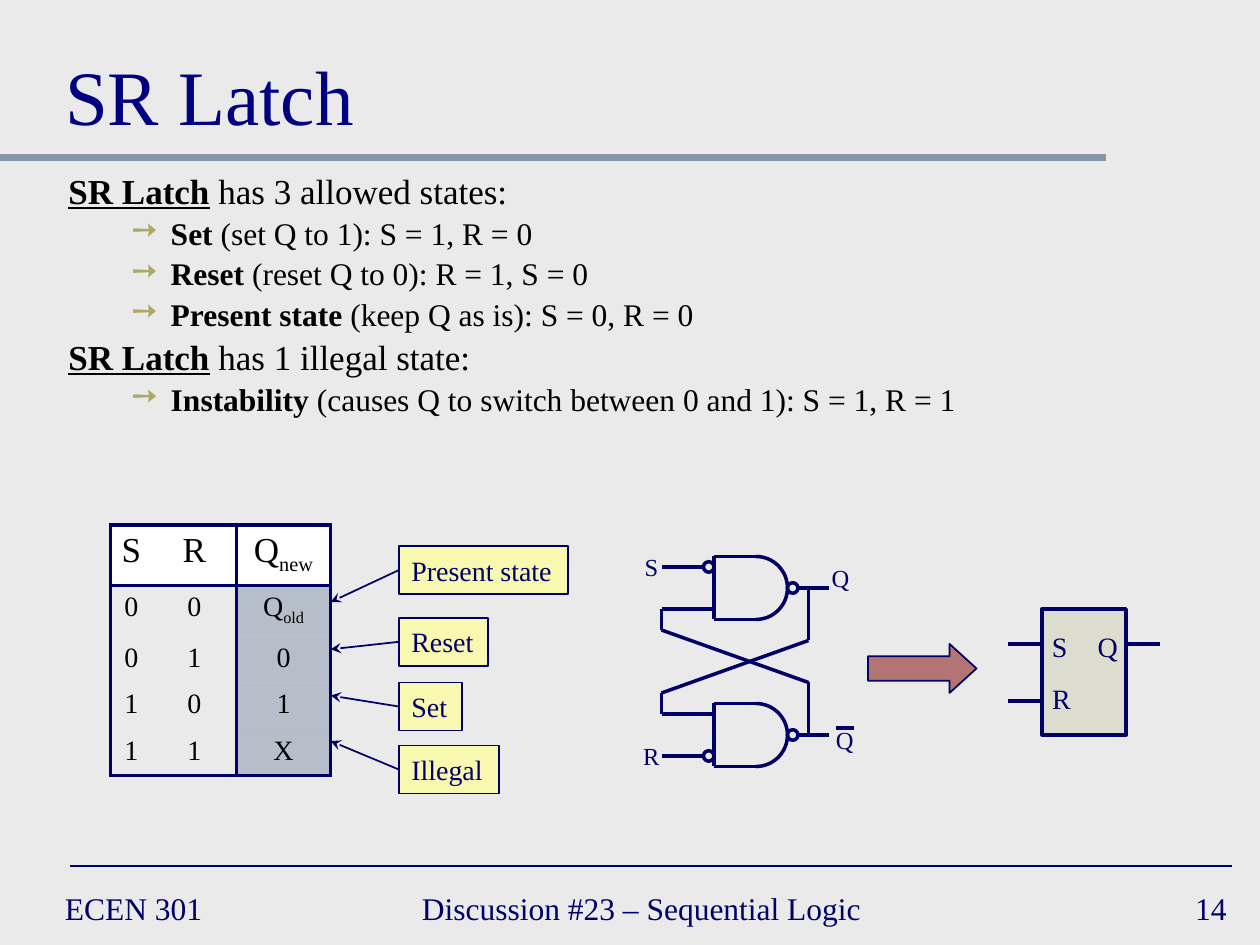
from math import cos, pi, sin

from lxml.etree import SubElement
from pptx import Presentation
from pptx.dml.color import RGBColor
from pptx.enum.shapes import MSO_CONNECTOR as CONNECTOR, MSO_SHAPE as SHAPE
from pptx.enum.text import MSO_ANCHOR as ANCHOR, MSO_AUTO_SIZE as AUTO_SIZE, PP_ALIGN as ALIGN
from pptx.oxml.ns import qn
from pptx.util import Pt

COLORS = {
    "background": "EAEAEA", "navy": "000066", "title": "000080", "black": "000000",
    "white": "FFFFFF", "slate": "8495A9", "olive": "ACA964", "block": "ABA964",
    "yellow": "FFFF99", "maroon": "800000",
}
FONT = "Times New Roman"


def rgb(name):
    return RGBColor.from_string(COLORS[name])


def set_opacity(properties, percent):
    color = properties.find(qn("a:solidFill"))[0]
    SubElement(color, qn("a:alpha"), val=str(percent * 1000))


class SlideBuilder:
    def __init__(self, slide):
        self.slide = slide
        self.shapes = slide.shapes
        slide.background.fill.solid()
        slide.background.fill.fore_color.rgb = rgb("background")

    def style(self, run, size, color="navy", bold=False, underline=False):
        font = run.font
        font.name, font.size, font.bold, font.underline = FONT, Pt(size), bold, underline
        font.color.rgb = rgb(color)

    def set_text(self, frame, text, size, color="navy", align=ALIGN.LEFT):
        frame.text = text
        frame.paragraphs[0].alignment = align
        self.style(frame.paragraphs[0].runs[0], size, color)

    def title(self, text, box):
        shape = self.shapes.title
        shape.left, shape.top, shape.width, shape.height = map(Pt, box)
        frame = shape.text_frame
        frame.vertical_anchor, frame.auto_size = ANCHOR.BOTTOM, AUTO_SIZE.NONE
        self.set_text(frame, text, 44, "title")

    def text(self, text, box, size, align=ALIGN.CENTER, anchor=ANCHOR.TOP, wrap=True):
        frame = self.shapes.add_textbox(*map(Pt, box)).text_frame
        frame.word_wrap, frame.vertical_anchor = wrap, anchor
        self.set_text(frame, text, size, align=align)

    def outline(self, items, box):
        """Items are (level, bold text, plain text)."""
        frame = self.shapes.add_textbox(*map(Pt, box)).text_frame
        frame.word_wrap = True
        for index, (level, lead, rest) in enumerate(items):
            paragraph = frame.add_paragraph() if index else frame.paragraphs[0]
            size = 18 if level else 20
            properties = paragraph._p.get_or_add_pPr()
            margin, indent = (58.5, -22.5) if level else (27, -27)
            properties.set("marL", str(Pt(margin)))
            properties.set("indent", str(Pt(indent)))
            paragraph.level = level
            paragraph.line_spacing = 0.9
            paragraph.space_before = Pt(size * 0.2 if index else 0)
            if level:
                bullet_color = SubElement(properties, qn("a:buClr"))
                SubElement(bullet_color, qn("a:srgbClr"), val=COLORS["olive"])
                SubElement(properties, qn("a:buChar"), char="➙")
            for text, strong in ((lead, True), (rest, False)):
                run = paragraph.add_run()
                run.text = text
                self.style(run, size, "black", strong, strong and not level)

    def shape(self, kind, box, fill=None, opacity=100, width=2):
        shape = self.shapes.add_shape(kind, *map(Pt, box))
        self.paint(shape, fill, opacity, width)
        return shape

    def paint(self, shape, fill, opacity, width):
        shape.shadow.inherit = False
        shape.line.color.rgb, shape.line.width = rgb("navy"), Pt(width)
        if fill:
            shape.fill.solid()
            shape.fill.fore_color.rgb = rgb(fill)
            set_opacity(shape._element.spPr, opacity)
        else:
            shape.fill.background()

    def line(self, x1, y1, x2, y2, width=2, color="navy"):
        line = self.shapes.add_connector(CONNECTOR.STRAIGHT, *map(Pt, (x1, y1, x2, y2)))
        line.line.color.rgb, line.line.width = rgb(color), Pt(width)
        SubElement(line._element.spPr, qn("a:effectLst"))
        return line

    def quarter_arc(self, x, y, radius, side):
        """Arc from above (side -1) or below (side 1) the centre to its right."""
        angles = [step * pi / 32 for step in range(17)]
        points = [(Pt(x + radius * sin(a)), Pt(y + side * radius * cos(a))) for a in angles]
        builder = self.shapes.build_freeform(*points[0])
        builder.add_line_segments(points[1:], close=False)
        self.paint(builder.convert_to_shape(), None, 100, 2)

    def bubble(self, x, y):
        self.shape(SHAPE.OVAL, (x - 3, y - 3, 6, 6))

    def gate(self, y, side):
        """NAND gate centred on y; side is -1 if its outer input is on top, else 1."""
        left, center, radius, wire, output = 408, 432, 18, 378, 462
        self.line(left, y - radius, left, y + radius)
        for half in (-1, 1):
            self.line(left, y + half * radius, center, y + half * radius)
            self.quarter_arc(center, y, radius, half)
        self.bubble(453, y)
        self.bubble(405, y + side * 12)
        self.line(402, y + side * 12, wire, y + side * 12)
        self.line(456, y, 474, y)
        feedback, bend = y - side * 12, y - side * 24
        self.line(left, feedback, wire, feedback)
        self.line(wire, feedback, wire, bend)
        self.line(wire, bend, output, y - side * 54)
        self.line(output, y, output, y - side * 30)

    def callout(self, text, box, tip):
        label = self.shape(SHAPE.RECTANGLE, box, "yellow", 70, 1)
        frame = label.text_frame
        frame.word_wrap, frame.vertical_anchor = False, ANCHOR.MIDDLE
        self.set_text(frame, text, 16)
        arrow = self.line(box[0], box[1] + box[3] / 2, *tip, width=1)
        arrow.begin_connect(label, 1)
        SubElement(arrow._element.spPr.find(qn("a:ln")), qn("a:tailEnd"), type="stealth")

    def border(self, cell, sides):
        properties = cell._tc.get_or_add_tcPr()
        for index, side in enumerate("LRTB"):
            edge = SubElement(properties, qn(f"a:ln{side}"), w=str(Pt(2.25)))
            if side in sides:
                fill = SubElement(edge, qn("a:solidFill"))
                SubElement(fill, qn("a:srgbClr"), val=COLORS["navy"])
            else:
                SubElement(edge, qn("a:noFill"))
            properties.insert(index, edge)

    def truth_table(self, rows, left, top, widths, heights):
        """A cell "Q_new" shows the part after the underscore as a subscript."""
        table = self.shapes.add_table(len(rows), len(widths), Pt(left), Pt(top),
                                      Pt(sum(widths)), Pt(sum(heights))).table
        table.first_row = table.horz_banding = False
        for column, width in zip(table.columns, widths):
            column.width = Pt(width)
        for r, (row, height) in enumerate(zip(rows, heights)):
            table.rows[r].height = Pt(height)
            for c, text in enumerate(row):
                cell = table.cell(r, c)
                cell.margin_left = cell.margin_right = 0
                paragraph = cell.text_frame.paragraphs[0]
                paragraph.alignment = ALIGN.CENTER
                for index, part in enumerate(text.split("_")):
                    run = paragraph.add_run()
                    run.text = part
                    self.style(run, 16 if r else 20, "black")
                    if index:
                        run.font._element.set("baseline", "-25000")
                if r and c < 2:
                    cell.fill.background()
                else:
                    cell.fill.solid()
                    cell.fill.fore_color.rgb = rgb("slate" if r else "white")
                    if r:
                        set_opacity(cell._tc.tcPr, 50)
                self.border(cell, ("L", "R", "LR")[c] + ("TB", "T", "", "", "B")[r])


def main():
    presentation = Presentation()
    presentation.slide_width, presentation.slide_height = Pt(720), Pt(540)
    builder = SlideBuilder(presentation.slides.add_slide(presentation.slide_layouts[5]))

    builder.line(0, 90, 632, 90, 4, "slate")
    builder.line(40, 495, 704, 495, 1)
    for text, left, width, align in (("ECEN 301", 30, 156, ALIGN.LEFT),
                                     ("Discussion #23 – Sequential Logic", 234, 276, ALIGN.LEFT),
                                     ("14", 558, 150, ALIGN.RIGHT)):
        builder.text(text, (left, 504, width, 30), 18, align, ANCHOR.MIDDLE)
    builder.title("SR Latch", (30, 12, 660, 72))
    builder.outline([
        (0, "SR Latch", " has 3 allowed states:"),
        (1, "Set", " (set Q to 1): S = 1, R = 0"),
        (1, "Reset", " (reset Q to 0): R = 1, S = 0"),
        (1, "Present state", " (keep Q as is): S = 0, R = 0"),
        (0, "SR Latch", " has 1 illegal state:"),
        (1, "Instability", " (causes Q to switch between 0 and 1): S = 1, R = 1"),
    ], (32, 96, 640, 153))

    builder.gate(336, -1)
    builder.gate(420, 1)
    for text, left, top in (("S", 354, 312), ("R", 354, 420), ("Q", 462, 318), ("Q", 464.5, 411)):
        builder.text(text, (left, top, 36.5, 24), 14)
    builder.line(478, 416, 488, 416)

    builder.shape(SHAPE.RECTANGLE, (595.5, 348, 48, 72), "block", 20)
    for start, y in ((576, 368), (576, 400.5), (643.5, 368)):
        builder.line(start, y, start + 19.5, y)
    for text, left, top, width in (("S", 594, 356, 23), ("Q", 620, 356, 26), ("R", 594, 386, 25)):
        builder.text(text, (left, top, width, 26.5), 16, wrap=False)

    rows = [("S", "R", "Q_new"), ("0", "0", "Q_old"), ("0", "1", "0"), ("1", "0", "1"),
            ("1", "1", "X")]
    builder.truth_table(rows, 63, 300, (24, 48, 54), (34.5, 29, 26.5, 26.5, 26.5))

    callouts = (("Present state", 312, 96.5, 344), ("Reset", 353, 51, 371),
                ("Set", 390, 36, 397.5), ("Illegal", 426, 57, 423.5))
    for text, top, width, tip in callouts:
        builder.callout(text, (228, top, width, 27.5), (189, tip))
    arrow = builder.shape(SHAPE.RIGHT_ARROW, (496, 368, 62, 28), "maroon", 50, 1)
    arrow.adjustments[0], arrow.adjustments[1] = 0.5, 0.55

    presentation.save("out.pptx")


if __name__ == "__main__":
    main()
